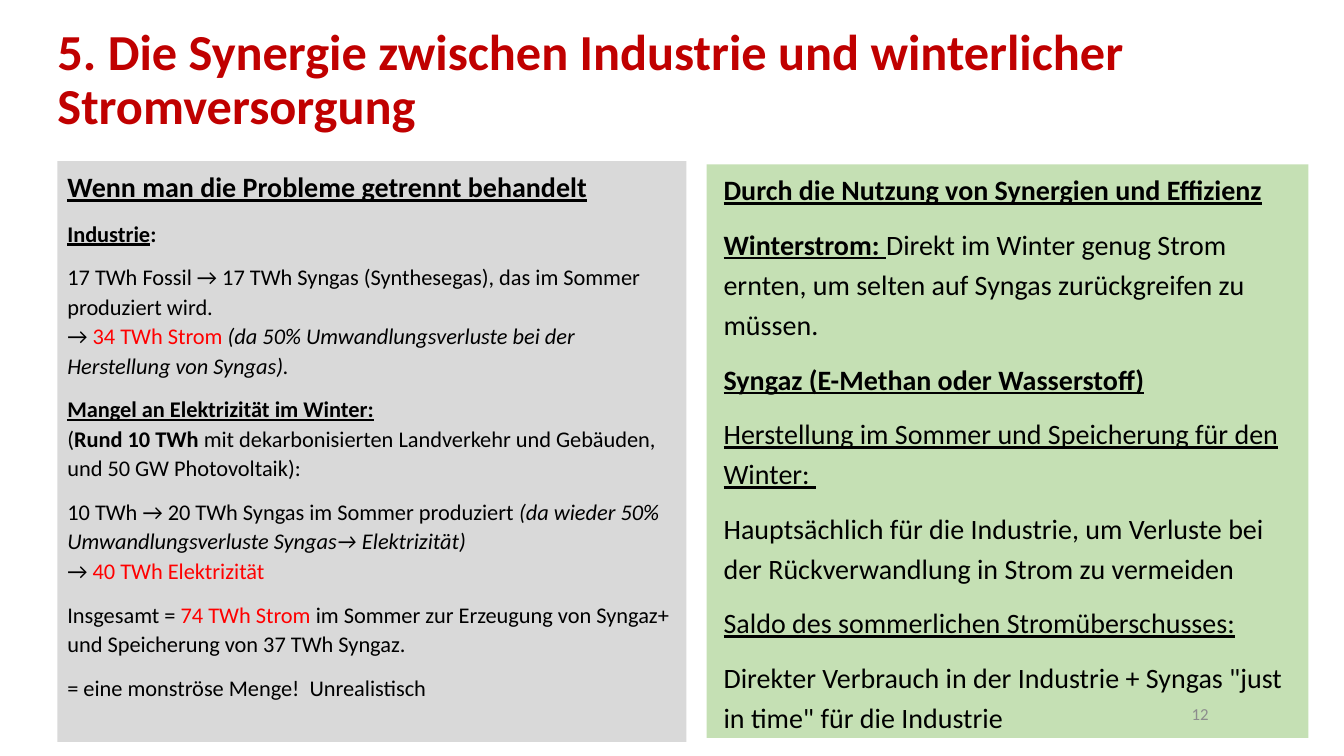
import pptx
import pptx.dml.color
import pptx.enum.shapes
import pptx.enum.text
import pptx.util

Pt = pptx.util.Pt
Align = pptx.enum.text.PP_ALIGN
Anchor = pptx.enum.text.MSO_ANCHOR

BLACK = "000000"
RED = "FF0000"
BOLD = {"bold": True}
ITALIC = {"italic": True}
UNDERLINE = {"underline": True}
HEADING = {"bold": True, "underline": True}
ALERT = {"color": RED}

SEPARATE = [
    (20, [("Wenn man die Probleme getrennt behandelt", HEADING)]),
    (16, [("Industrie", HEADING), (":", BOLD)]),
    (16, [("17 TWh Fossil → 17 TWh Syngas (Synthesegas), das im Sommer produziert wird. \n→ ", {}),
          ("34 TWh Strom ", ALERT),
          ("(da 50% Umwandlungsverluste bei der Herstellung von Syngas).", ITALIC)]),
    (16, [("Mangel an Elektrizität im Winter:\n", HEADING),
          ("(", {}),
          ("Rund 10 TWh ", BOLD),
          ("mit dekarbonisierten Landverkehr und Gebäuden, und 50 GW Photovoltaik):", {})]),
    (16, [("10 TWh → 20 TWh Syngas im Sommer produziert ", {}),
          ("(da wieder 50% Umwandlungsverluste Syngas→ Elektrizität) \n", ITALIC),
          ("→ ", {}),
          ("40 TWh Elektrizität", ALERT)]),
    (16, [("Insgesamt = ", {}),
          ("74 TWh Strom ", ALERT),
          ("im Sommer zur Erzeugung von Syngaz+ und Speicherung von 37 TWh Syngaz.", {})]),
    (16, [("= eine monströse Menge!  Unrealistisch", {})]),
]

SYNERGY = [
    (20, [("Durch die Nutzung von Synergien und Effizienz", HEADING)]),
    (20, [("Winterstrom: ", HEADING),
          ("Direkt im Winter genug Strom ernten, um selten auf Syngas zurückgreifen zu müssen.", {})]),
    (20, [("Syngaz (E-Methan oder Wasserstoff)", HEADING)]),
    (20, [("Herstellung im Sommer und Speicherung für den Winter: ", UNDERLINE)]),
    (20, [("Hauptsächlich für die Industrie, um Verluste bei der Rückverwandlung in Strom zu vermeiden", {})]),
    (20, [("Saldo des sommerlichen Stromüberschusses:", UNDERLINE)]),
    (20, [('Direkter Verbrauch in der Industrie + Syngas "just in time" für die Industrie', {})]),
]


def rgb(value):
    return pptx.dml.color.RGBColor.from_string(value)


class SlideBuilder:
    font = "Calibri"

    def __init__(self, deck):
        self.page = deck.slides.add_slide(deck.slide_layouts[5])

    def fill_text(self, box, paragraphs, anchor=Anchor.TOP, **layout):
        frame = box.text_frame
        frame.word_wrap = True
        frame.auto_size = pptx.enum.text.MSO_AUTO_SIZE.NONE
        frame.vertical_anchor = anchor
        layout = {"alignment": Align.LEFT, **layout}
        for index, (size, spans) in enumerate(paragraphs):
            para = frame.add_paragraph() if index else frame.paragraphs[0]
            for name, value in layout.items():
                setattr(para, name, value)
            for text, style in spans:
                self.add_spans(para, text, size, style)

    def add_spans(self, para, text, size, style):
        style = {"name": self.font, "size": Pt(size), "bold": False, **style}
        color = style.pop("color", BLACK)
        for index, line in enumerate(text.split("\n")):
            if index:
                para.add_line_break()
            if line:
                span = para.add_run()
                span.text = line
                for name, value in style.items():
                    setattr(span.font, name, value)
                span.font.color.rgb = rgb(color)

    def title(self, area, text, size, color):
        box = self.page.shapes.title
        for name, value in zip(("left", "top", "width", "height"), area):
            setattr(box, name, Pt(value))
        self.fill_text(box, [(size, [(text, {"bold": True, "color": color})])],
                       Anchor.MIDDLE, line_spacing=0.9)

    def panel(self, area, fill):
        box = self.page.shapes.add_shape(
            pptx.enum.shapes.MSO_SHAPE.RECTANGLE, *map(Pt, area))
        box.shadow.inherit = False
        box.fill.solid()
        box.fill.fore_color.rgb = rgb(fill)
        box.line.fill.background()
        return box

    def text(self, area, paragraphs, anchor=Anchor.TOP, **layout):
        box = self.page.shapes.add_textbox(*map(Pt, area))
        self.fill_text(box, paragraphs, anchor, **layout)


def main():
    deck = pptx.Presentation()
    deck.slide_width, deck.slide_height = Pt(960), Pt(540)
    slide = SlideBuilder(deck)
    slide.title((33.84, 5.76, 836.64, 104.4),
                "5. Die Synergie zwischen Industrie und winterlicher Stromversorgung",
                36, "C00000")
    slide.panel((504.72, 117.36, 429.84, 409.68), "C5E0B4")
    separate = slide.panel((41.04, 115.2, 449.28, 414.72), "D9D9D9")
    slide.fill_text(separate, SEPARATE, line_spacing=1.1, space_before=Pt(10))
    slide.text((654.48, 495.36, 216, 28.8), [(12, [("12", {"color": "8C8C8C"})])],
               Anchor.MIDDLE, alignment=Align.RIGHT)
    slide.text((509.76, 115.2, 424.08, 409.68), SYNERGY,
               line_spacing=1.2, space_before=Pt(10))
    deck.save("out.pptx")


if __name__ == "__main__":
    main()
